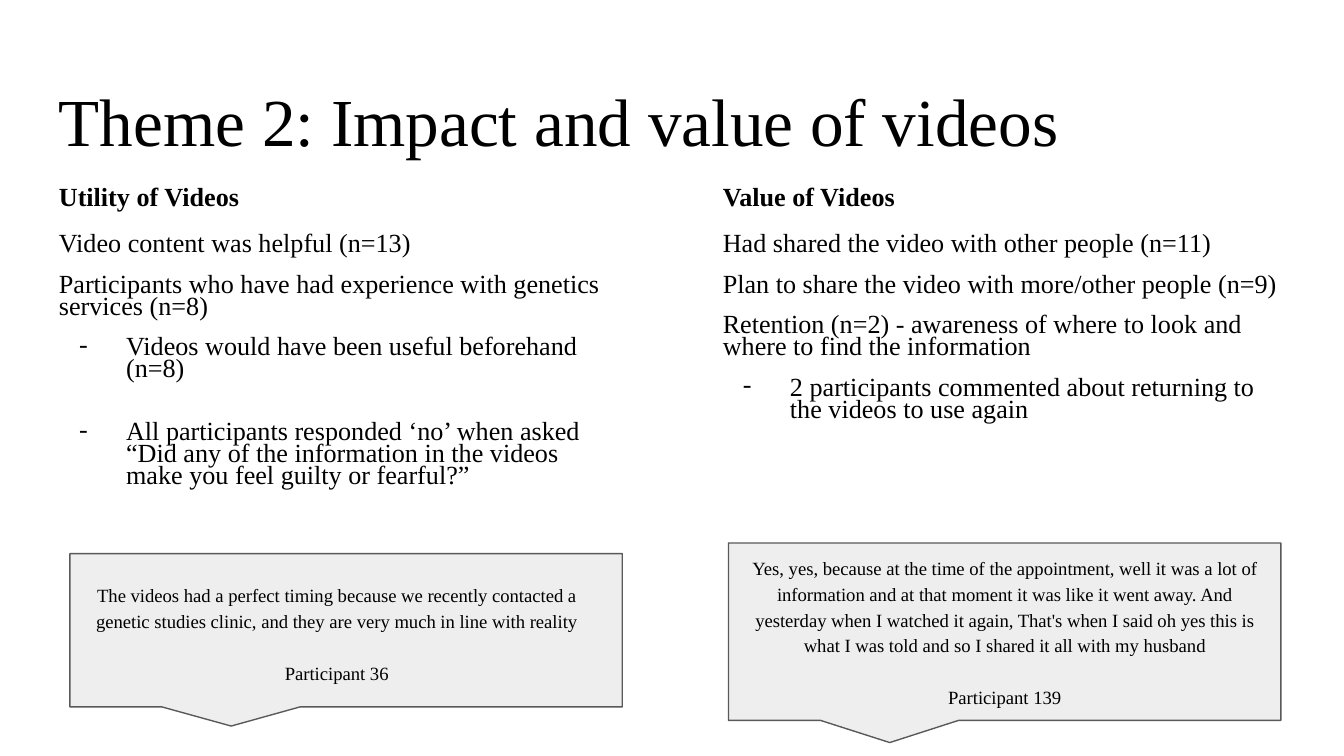
import pptx
import pptx.util
import pptx.dml.color
import pptx.enum.shapes
import pptx.enum.text
import pptx.oxml
import pptx.oxml.ns
from pptx.util import Inches

COLORS = {"ink": "000000", "panel": "EEEEEE", "edge": "595959"}
ALIGN = pptx.enum.text.PP_ALIGN


def color(name):
    return pptx.dml.color.RGBColor.from_string(COLORS[name])


class ThemePage:
    font = "Times New Roman"

    def __init__(self, deck):
        self.page = deck.slides.add_slide(deck.slide_layouts[6])

    def callout(self, left, top, width, height):
        kind = pptx.enum.shapes.MSO_SHAPE.ROUNDED_RECTANGULAR_CALLOUT
        shape = self.page.shapes.add_shape(
            kind, Inches(left), Inches(top), Inches(width), Inches(height))
        for index, value in enumerate((-0.208, 0.625, 0)):
            shape.adjustments[index] = value
        shape.shadow.inherit = False
        shape.fill.solid()
        shape.fill.fore_color.rgb = color("panel")
        shape.line.color.rgb = color("edge")
        shape.line.width = pptx.util.Pt(0.75)

    def text_box(self, left, top, width, height):
        box = self.page.shapes.add_textbox(
            Inches(left), Inches(top), Inches(width), Inches(height))
        frame = box.text_frame
        frame.word_wrap = True
        frame.vertical_anchor = pptx.enum.text.MSO_ANCHOR.TOP
        frame.margin_left = frame.margin_right = Inches(0.1)
        frame.margin_top = frame.margin_bottom = Inches(0.1)
        return frame

    def paragraph(self, frame, text, size, spacing=1.0, before=0, bold=False,
                  align=ALIGN.LEFT, dash=False):
        first = frame.paragraphs[0]
        para = frame.add_paragraph() if first.runs else first
        para.alignment = align
        para.line_spacing = spacing
        para.space_before = pptx.util.Pt(before)
        if dash:
            self.dash(para)
        span = para.add_run()
        span.text = text
        span.font.name = self.font
        span.font.size = pptx.util.Pt(size)
        span.font.bold = bold
        span.font.color.rgb = color("ink")

    def dash(self, para):
        properties = para._p.get_or_add_pPr()
        properties.set("marL", str(Inches(0.5)))
        properties.set("indent", str(Inches(-0.35)))
        namespace = pptx.oxml.ns.nsdecls("a")
        for markup in (
            f'<a:buClr {namespace}><a:srgbClr val="{COLORS["ink"]}"/></a:buClr>',
            f'<a:buFont {namespace} typeface="{self.font}"/>',
            f'<a:buChar {namespace} char="-"/>',
        ):
            properties.append(pptx.oxml.parse_xml(markup))

    def title(self, text):
        frame = self.text_box(0.34, 0.49, 9.32, 0.63)
        self.paragraph(frame, text, 36)

    def column(self, left, height, heading, items):
        frame = self.text_box(left, 1.26, 4.37, height)
        self.paragraph(frame, heading, 14, spacing=0.95, bold=True)
        for text, before, dash in items:
            self.paragraph(frame, text, 14, spacing=0.7, before=before, dash=dash)

    def quote(self, place, text, speaker):
        frame = self.text_box(*place)
        for line, before in ((text, 0), (speaker, 14)):
            self.paragraph(frame, line, 10, spacing=1.15, before=before,
                           align=ALIGN.CENTER)


def main():
    deck = pptx.Presentation()
    deck.slide_width = Inches(10)
    deck.slide_height = pptx.util.Pt(405)
    theme = ThemePage(deck)
    theme.callout(5.42, 4.04, 4.11, 1.32)
    theme.callout(0.52, 4.12, 4.11, 1.14)
    theme.title("Theme 2: Impact and value of videos")
    theme.column(0.34, 2.95, "Utility of Videos", [
        ("Video content was helpful (n=13)", 12, False),
        ("Participants who have had experience with genetics services (n=8)",
         10, False),
        ("Videos would have been useful beforehand (n=8)", 10, True),
        ("All participants responded ‘no’ when asked “Did any of the information "
         "in the videos make you feel guilty or fearful?”", 22, True),
    ])
    theme.column(5.28, 2.83, "Value of Videos", [
        ("Had shared the video with other people (n=11)", 12, False),
        ("Plan to share the video with more/other people (n=9)", 10, False),
        ("Retention (n=2) - awareness of where to look and where to find the "
         "information", 10, False),
        ("2 participants commented about returning to the videos to use again",
         10, True),
    ])
    theme.quote(
        (5.48, 4.02, 3.99, 1.53),
        "Yes, yes, because at the time of the appointment, well it was a lot of "
        "information and at that moment it was like it went away. And yesterday "
        "when I watched it again, That's when I said oh yes this is what I was "
        "told and so I shared it all with my husband",
        "Participant 139")
    theme.quote(
        (0.45, 4.22, 4.11, 1.14),
        "The videos had a perfect timing because we recently contacted a genetic "
        "studies clinic, and they are very much in line with reality",
        "Participant 36")
    deck.save("out.pptx")


if __name__ == "__main__":
    main()
